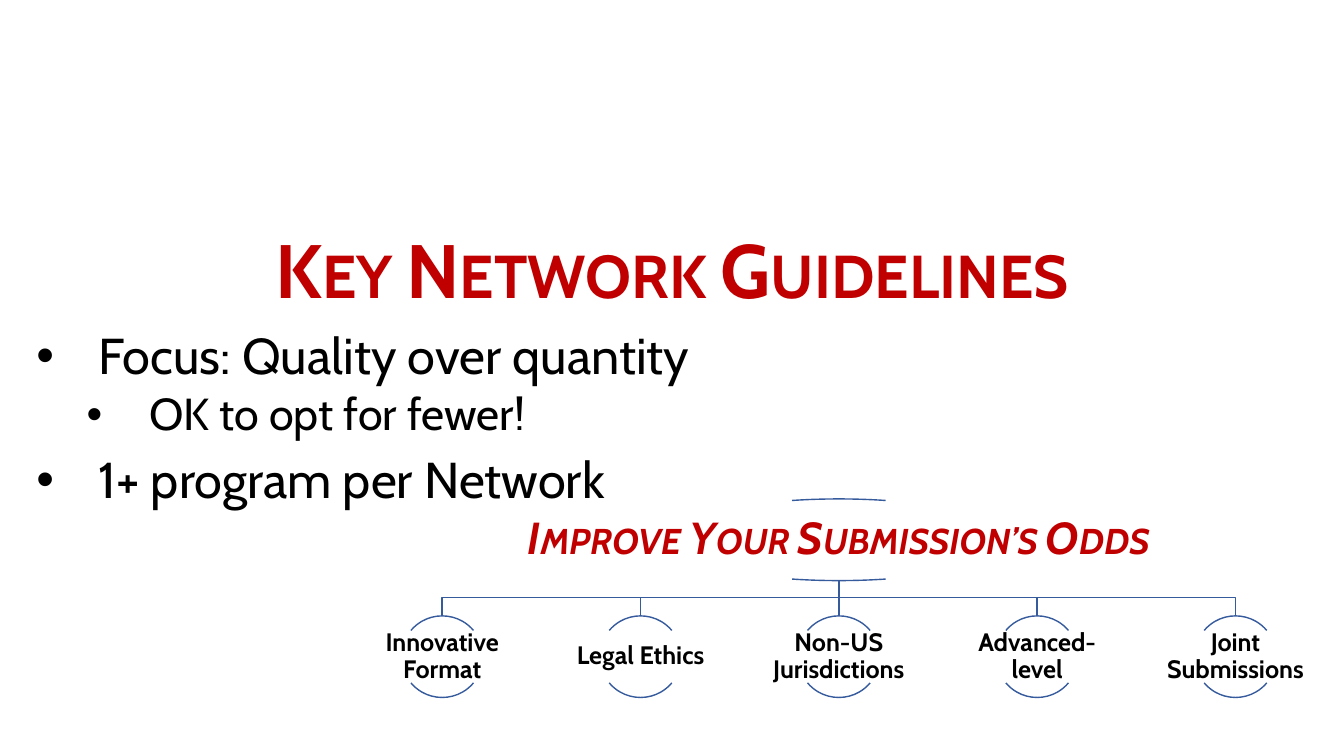
from lxml.etree import SubElement
from pptx import Presentation
from pptx.dml.color import RGBColor
from pptx.enum.shapes import MSO_CONNECTOR, MSO_SHAPE
from pptx.enum.text import MSO_ANCHOR, MSO_AUTO_SIZE, PP_ALIGN
from pptx.oxml.ns import qn
from pptx.util import Inches, Pt

RED = RGBColor(0xC0, 0x00, 0x00)
BLUE = RGBColor(0x36, 0x5B, 0x9D)
BLACK = RGBColor(0x00, 0x00, 0x00)

TITLE = "Key Network Guidelines"
POINTS = [  # text, level, size, space before
    ("Focus: Quality over quantity", 0, 36, 0),
    ("OK to opt for fewer!", 1, 32, 5),
    ("1+ program per Network", 0, 36, 10),
]
ROOT = "Improve Your Submission’s Odds"
LEAVES = ["Innovative Format", "Legal Ethics", "Non-US Jurisdictions",
          "Advanced-level", "Joint Submissions"]

MID, STEP = 8.32, 1.967  # centre of the tree, gap between leaf centres
ROOT_TOP, LEAF_TOP, HIGH = 4.95, 6.11, 0.81
ARCS = [(132, 192), (24, 84)]  # upper and lower arc angles

TITLE_FONT = dict(name="Cabin", size=Pt(54), bold=True)
ROOT_FONT = dict(name="Cabin", size=Pt(32), bold=True, italic=True)
LEAF_FONT = dict(name="Cabin", size=Pt(18), bold=True)


def write(para, text, font, color, caps=False):
    run = para.add_run()
    run.text = text
    for key, value in font.items():
        setattr(run.font, key, value)
    run.font.color.rgb = color
    if caps:
        run._r.get_or_add_rPr().set("cap", "small")
    para.line_spacing = 0.9


def place(shape, left, top, width, height):
    box = dict(left=left, top=top, width=width, height=height)
    for key, value in box.items():
        setattr(shape, key, Inches(value))


def style(shape):
    shape.line.color.rgb = BLUE
    shape.line.width = Pt(1)


def link(shapes, x):
    """Draw the branch from the root down to the leaf centred at x."""
    top, end = ROOT_TOP + HIGH, LEAF_TOP
    if x == MID:
        line = shapes.add_connector(MSO_CONNECTOR.STRAIGHT, Inches(x),
                                    Inches(top), Inches(x), Inches(end))
        SubElement(line._element.spPr, qn("a:effectLst"))
    else:
        bend = top + 0.17
        path = [(MID, bend), (x, bend), (x, end)]
        pen = shapes.build_freeform(Inches(MID), Inches(top))
        pen.add_line_segments([(Inches(a), Inches(b)) for a, b in path],
                              close=False)
        line = pen.convert_to_shape()
        line.fill.background()
        line.shadow.inherit = False
    style(line)


def node(shapes, x, top, wide, text, area, inset, font, color, caps=False):
    """Draw two arcs and a label of the given area, centred at x."""
    for angles in ARCS:
        arc = shapes.add_shape(MSO_SHAPE.ARC, Inches(x - wide / 2),
                               Inches(top), Inches(wide), Inches(HIGH))
        for i, angle in enumerate(angles):
            arc.adjustments[i] = angle
        arc.fill.background()
        arc.shadow.inherit = False
        style(arc)
    width, height = area
    box = shapes.add_textbox(Inches(x - width / 2),
                             Inches(top + (HIGH - height) / 2),
                             Inches(width), Inches(height))
    frame = box.text_frame
    frame.word_wrap = True
    frame.vertical_anchor = MSO_ANCHOR.MIDDLE
    for side in ("left", "right", "top", "bottom"):
        setattr(frame, "margin_" + side, Inches(inset))
    para = frame.paragraphs[0]
    para.alignment = PP_ALIGN.CENTER
    write(para, text, font, color, caps)


def bullet(para, level):
    para.level = level
    props = para._p.get_or_add_pPr()
    props.set("marL", str(Inches(0.62 + level * 0.5)))
    props.set("indent", str(Inches(-0.62)))
    SubElement(props, qn("a:buFont")).set("typeface", "Arial")
    SubElement(props, qn("a:buChar")).set("char", "•")


def main():
    deck = Presentation()
    deck.slide_width, deck.slide_height = Inches(13.33), Inches(7.5)
    slide = deck.slides.add_slide(deck.slide_layouts[1])
    shapes = slide.shapes

    centres = [MID + (i - len(LEAVES) // 2) * STEP for i in range(len(LEAVES))]
    for x in centres:
        link(shapes, x)
    node(shapes, MID, ROOT_TOP, 3.42, ROOT, (6.84, 0.52), 0.02,
         ROOT_FONT, RED, True)
    for x, text in zip(centres, LEAVES):
        node(shapes, x, LEAF_TOP, HIGH, text, (1.63, 0.52), 0.01,
             LEAF_FONT, BLACK)

    title, body = shapes.title, slide.placeholders[1]
    place(title, 2.1, 1.92, 9.13, 1.25)
    place(body, 0.26, 3.23, 11.89, 3.21)
    for shape in (title, body):
        shape.text_frame.auto_size = MSO_AUTO_SIZE.NONE
    title.text_frame.vertical_anchor = MSO_ANCHOR.BOTTOM
    head = title.text_frame.paragraphs[0]
    head.alignment = PP_ALIGN.CENTER
    write(head, TITLE, TITLE_FONT, RED, True)

    frame = body.text_frame
    for i, (text, level, size, gap) in enumerate(POINTS):
        para = frame.add_paragraph() if i else frame.paragraphs[0]
        bullet(para, level)
        write(para, text, dict(name="Cabin", size=Pt(size)), BLACK)
        para.space_before = Pt(gap)

    deck.save("out.pptx")


if __name__ == "__main__":
    main()
